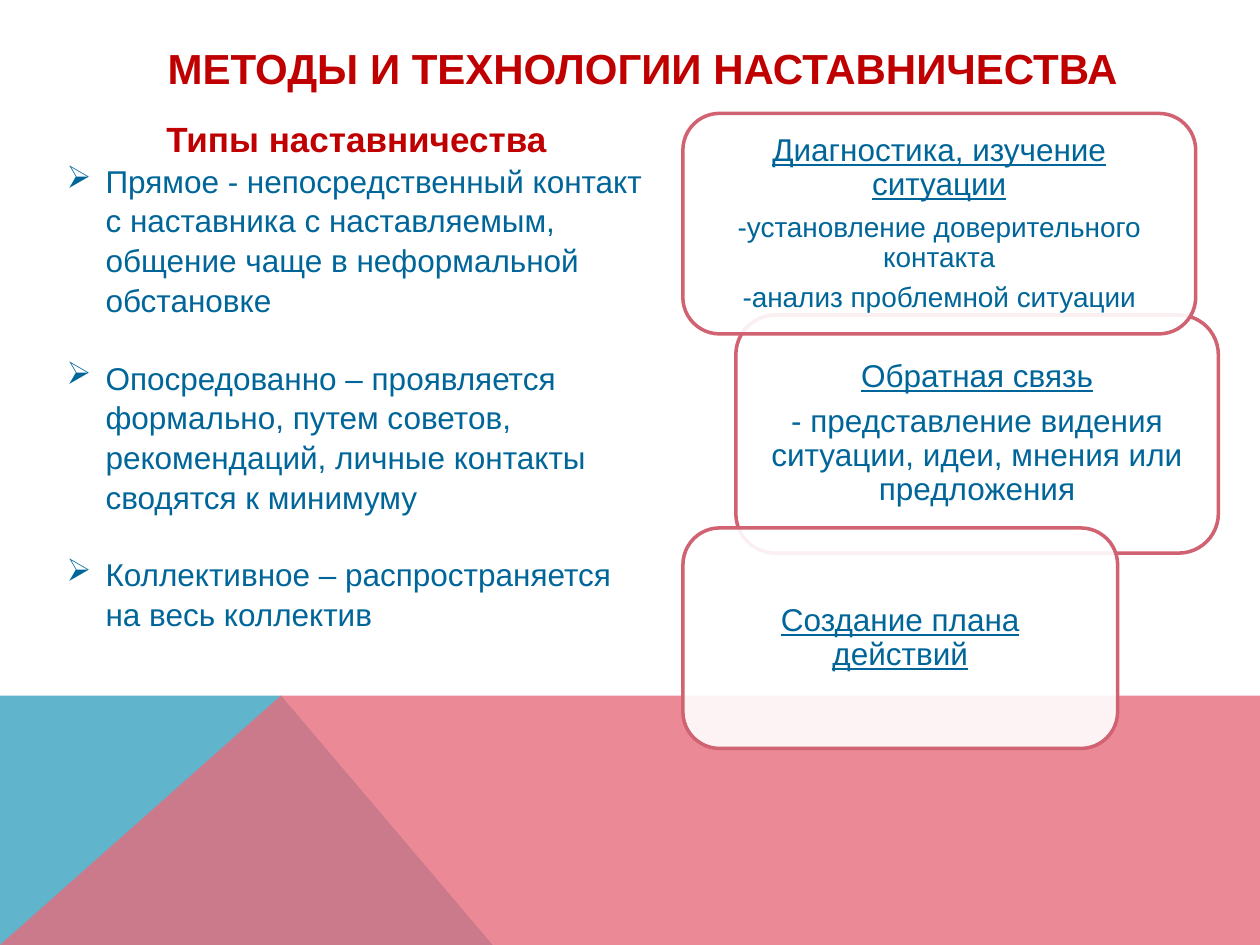
from dataclasses import dataclass

from lxml import etree
from pptx import Presentation
from pptx.dml.color import RGBColor
from pptx.enum.shapes import MSO_SHAPE
from pptx.enum.text import MSO_ANCHOR, MSO_AUTO_SIZE, PP_ALIGN
from pptx.oxml.ns import qn
from pptx.util import Inches, Pt

ROUND = MSO_SHAPE.ROUNDED_RECTANGLE
TOP, MIDDLE = MSO_ANCHOR.TOP, MSO_ANCHOR.MIDDLE
LEFT, CENTER = PP_ALIGN.LEFT, PP_ALIGN.CENTER
NO_FIT = MSO_AUTO_SIZE.NONE

FONT = "Arial"
RED, BLUE, WHITE = "C00000", "006699", "FFFFFF"
TEAL, PINK, ROSE = "60B5CC", "E66C7D", "D16271"


@dataclass
class Line:
    text: str
    size: int = 18
    under: bool = False


@dataclass
class Card:
    left: float
    top: float
    width: float
    height: float
    pad: float
    lines: list[Line]


# Later cards lie over earlier ones
CARDS = [
    Card(5.84, 2.5, 3.83, 1.89, 0.07, [
        Line("Обратная связь", under=True),
        Line("- представление видения ситуации, идеи, мнения или предложения"),
    ]),
    Card(5.42, 4.19, 3.45, 1.75, 0.16, [
        Line("Создание плана действий", under=True),
    ]),
    Card(5.42, 0.9, 4.07, 1.75, 0.19, [
        Line("Диагностика, изучение ситуации", under=True),
        Line("-установление доверительного контакта", 16),
        Line("-анализ проблемной ситуации", 16),
    ]),
]

TYPES = [
    "Прямое - непосредственный контакт с наставника с наставляемым, "
    "общение чаще в неформальной обстановке",
    "Опосредованно – проявляется формально, путем советов, "
    "рекомендаций, личные контакты сводятся к минимуму",
    "Коллективное – распространяется на весь коллектив",
]


def color(code: str) -> RGBColor:
    return RGBColor.from_string(code)


def paint(shape, code: str, alpha: int = 100) -> None:
    shape.shadow.inherit = False
    shape.fill.solid()
    shape.fill.fore_color.rgb = color(code)
    if alpha < 100:
        tint = shape.fill._xPr.find(qn("a:solidFill"))[0]
        etree.SubElement(tint, qn("a:alpha"), val=str(alpha * 1000))


def style(par, text: str, size: int, code: str, align=LEFT,
          bold: bool = False, under: bool = False) -> None:
    par.text = text
    par.alignment = align
    font = par.font
    font.name, font.size = FONT, Pt(size)
    font.bold, font.underline = bold, under
    font.color.rgb = color(code)


def add_par(frame, first: bool):
    return frame.paragraphs[0] if first else frame.add_paragraph()


def add_bullet(par, sign: str, indent: float) -> None:
    props = par._p.get_or_add_pPr()
    props.set("marL", str(Inches(indent)))
    props.set("indent", str(-Inches(indent)))
    mark = etree.Element(qn("a:buChar"), char=sign)
    props.find(qn("a:defRPr")).addprevious(mark)


def add_area(slide, points: list[tuple[float, float]], code: str,
             alpha: int = 100) -> None:
    spots = [(Inches(x), Inches(y)) for x, y in points]
    pen = slide.shapes.build_freeform(*spots[0], scale=1.0)
    pen.add_line_segments(spots[1:], close=True)
    area = pen.convert_to_shape()
    paint(area, code, alpha)
    area.line.fill.background()


def add_title(slide, text: str) -> None:
    title = slide.shapes.title
    title.left, title.top = Inches(1.14), Inches(0.13)
    title.width, title.height = Inches(8.63), Inches(1.5)
    frame = title.text_frame
    frame.auto_size = NO_FIT
    frame.word_wrap = True
    frame.vertical_anchor = TOP
    frame.margin_left, frame.margin_top = Inches(0.19), Inches(0.21)
    style(frame.paragraphs[0], text, 24, RED, bold=True)


def add_types(slide, head: str, items: list[str]) -> None:
    box = slide.shapes.add_textbox(
        Inches(0.43), Inches(0.87), Inches(4.8), Inches(4.04))
    frame = box.text_frame
    frame.word_wrap = True
    style(frame.paragraphs[0], head, 20, RED, CENTER, bold=True)
    for item in items:
        par = frame.add_paragraph()
        style(par, item, 18, BLUE)
        add_bullet(par, "➢", 0.31)
        if item != items[-1]:
            par.space_after = Pt(21.7)
    for par in frame.paragraphs:
        par.line_spacing = 1.05


def add_card(slide, card: Card) -> None:
    shape = slide.shapes.add_shape(
        ROUND, Inches(card.left), Inches(card.top),
        Inches(card.width), Inches(card.height))
    paint(shape, WHITE, 90)
    shape.line.color.rgb = color(ROSE)
    shape.line.width = Pt(2)
    frame = shape.text_frame
    frame.word_wrap = True
    frame.vertical_anchor = MIDDLE
    frame.margin_left = frame.margin_right = Inches(card.pad)
    frame.margin_top = frame.margin_bottom = Inches(0.07)
    for i, line in enumerate(card.lines):
        par = add_par(frame, i == 0)
        style(par, line.text, line.size, BLUE, CENTER, under=line.under)
        par.line_spacing = 0.9
        par.space_after = Pt(round(line.size * 0.35, 1))


def main() -> None:
    deck = Presentation()
    deck.slide_width, deck.slide_height = Inches(10), Inches(7.5)
    slide = deck.slides.add_slide(deck.slide_layouts[5])

    # Coloured base of the slide
    add_area(slide, [(0, 7.5), (0, 5.52), (2.23, 5.52), (3.91, 7.5)], TEAL)
    add_area(slide, [(0, 7.5), (2.23, 5.52), (10, 5.52), (10, 7.5)], PINK, 80)

    # Title, list on the left, cards on the right
    add_title(slide, "МЕТОДЫ И ТЕХНОЛОГИИ НАСТАВНИЧЕСТВА")
    add_types(slide, "Типы наставничества", TYPES)
    for card in CARDS:
        add_card(slide, card)

    deck.save("out.pptx")


if __name__ == "__main__":
    main()
